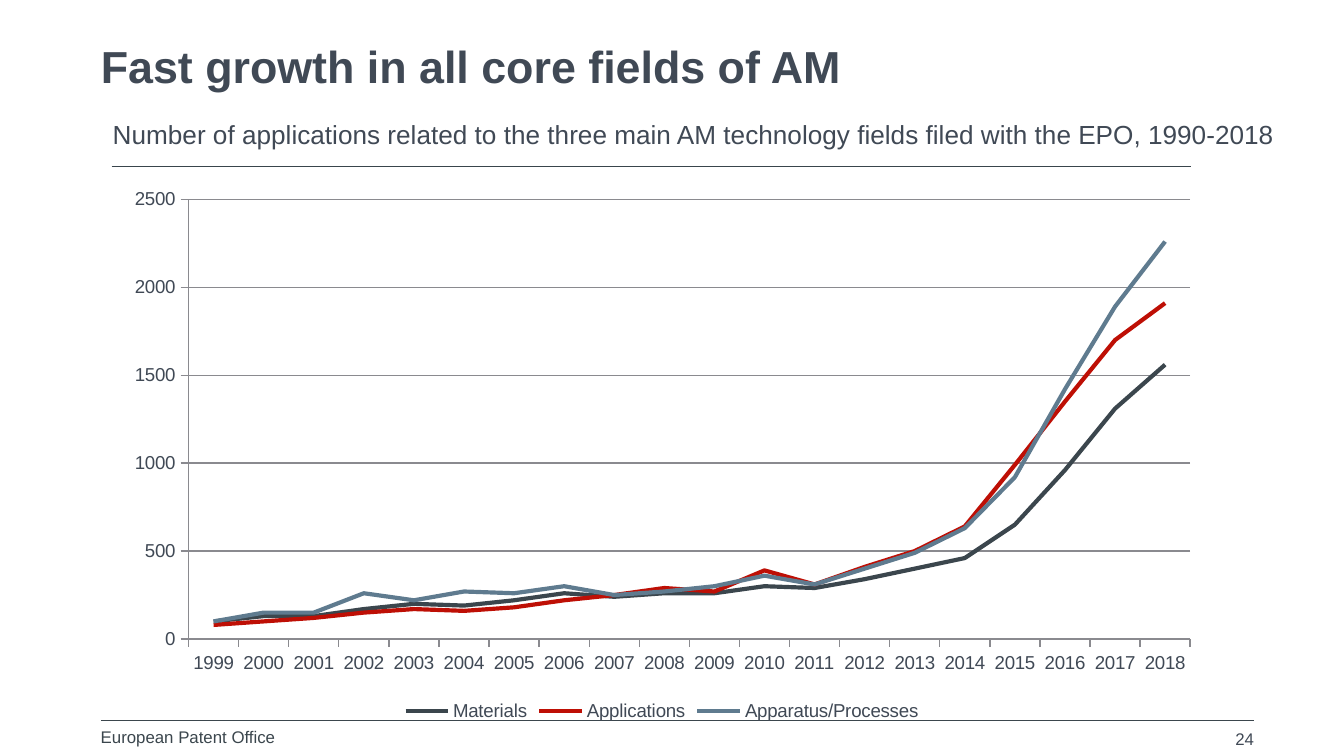
import pptx
import pptx.chart.data
import pptx.dml.color
import pptx.enum.chart
import pptx.enum.shapes
import pptx.enum.text
import pptx.oxml
import pptx.oxml.ns
import pptx.util
from pptx.util import Inches

FONT = "Arial"
COLORS = {
    "text": "404955",
    "slate": "3B464D",
    "rule": "39454C",
    "grid": "8A8A8F",
    "red": "BE0F05",
    "steel": "5F7B8F",
}
YEARS = [str(year) for year in range(1999, 2019)]
SERIES = [
    ("Materials", "slate", [100, 130, 130, 170, 200, 190, 220, 260, 240, 260,
                            260, 300, 290, 340, 400, 460, 650, 960, 1310, 1560]),
    ("Applications", "red", [80, 100, 120, 150, 170, 160, 180, 220, 250, 290,
                             270, 390, 310, 410, 500, 640, 990, 1350, 1700, 1910]),
    ("Apparatus/Processes", "steel", [100, 150, 150, 260, 220, 270, 260, 300, 250, 270,
                                      300, 360, 310, 400, 490, 630, 920, 1420, 1890, 2260]),
]


def rgb(name):
    return pptx.dml.color.RGBColor.from_string(COLORS[name])


def style_line(line, color, width):
    line.color.rgb = rgb(color)
    line.width = pptx.util.Pt(width)


def style_font(font, size, color="text", bold=False):
    font.name = FONT
    font.size = pptx.util.Pt(size)
    font.bold = bold
    font.color.rgb = rgb(color)


def place(shape, box):
    shape.left, shape.top, shape.width, shape.height = map(Inches, box)


def write_text(shape, text, size, color="text", bold=False, insets=(0, 0)):
    frame = shape.text_frame
    frame.word_wrap = True
    frame.vertical_anchor = pptx.enum.text.MSO_ANCHOR.TOP
    frame.margin_left = frame.margin_right = Inches(insets[0])
    frame.margin_top = frame.margin_bottom = Inches(insets[1])
    frame.text = text
    paragraph = frame.paragraphs[0]
    paragraph.alignment = pptx.enum.text.PP_ALIGN.LEFT
    style_font(paragraph.font, size, color, bold)
    return paragraph


def add_text(slide, box, text, size, color="text", insets=(0, 0)):
    shape = slide.shapes.add_textbox(*map(Inches, box))
    return write_text(shape, text, size, color, insets=insets)


def add_rule(slide, left, top, width, color):
    connector = slide.shapes.add_connector(
        pptx.enum.shapes.MSO_CONNECTOR.STRAIGHT,
        Inches(left), Inches(top), Inches(left + width), Inches(top))
    style_line(connector.line, color, 0.75)
    properties = connector._element.spPr
    properties.append(pptx.oxml.parse_xml(
        f"<a:effectLst {pptx.oxml.ns.nsdecls('a')}/>"))


def add_heading(slide, left, top, width):
    title = slide.shapes.title
    place(title, (left, top, width, 0.44))
    paragraph = write_text(title, "Fast growth in all core fields of AM", 24, bold=True)
    paragraph.line_spacing = pptx.util.Pt(28)
    add_text(slide, (left - 0.01, top + 0.53, 9.26, 0.34),
             "Number of applications related to the three main AM technology "
             "fields filed with the EPO, 1990-2018", 14, insets=(0.1, 0.05))
    add_rule(slide, left + 0.08, top + 0.94, 8.03, "rule")


def set_plot_area(chart, x, y, width, height):
    values = "".join(f'<c:{tag} val="{value}"/>' for tag, value in [
        ("layoutTarget", "inner"), ("xMode", "edge"), ("yMode", "edge"),
        ("x", x), ("y", y), ("w", width), ("h", height)])
    layout = pptx.oxml.parse_xml(
        f"<c:layout {pptx.oxml.ns.nsdecls('c')}>"
        f"<c:manualLayout>{values}</c:manualLayout></c:layout>")
    plot_area = chart._chartSpace.chart.plotArea
    for previous in plot_area.findall(pptx.oxml.ns.qn("c:layout")):
        plot_area.remove(previous)
    plot_area.insert(0, layout)


def add_growth_chart(slide, box):
    data = pptx.chart.data.CategoryChartData()
    data.categories = YEARS
    for name, _, values in SERIES:
        data.add_series(name, values)
    chart = slide.shapes.add_chart(
        pptx.enum.chart.XL_CHART_TYPE.LINE, *map(Inches, box), data).chart
    style_font(chart.font, 10)
    chart.has_title = False
    chart.has_legend = True
    chart.legend.position = pptx.enum.chart.XL_LEGEND_POSITION.BOTTOM
    chart.legend.include_in_layout = False
    plot = chart.plots[0]
    plot.vary_by_categories = False
    for series, (_, color, _) in zip(plot.series, SERIES):
        series.smooth = False
        series.marker.style = pptx.enum.chart.XL_MARKER_STYLE.NONE
        style_line(series.format.line, color, 2.25)
    for axis in (chart.category_axis, chart.value_axis):
        axis.major_tick_mark = pptx.enum.chart.XL_TICK_MARK.OUTSIDE
        axis.minor_tick_mark = pptx.enum.chart.XL_TICK_MARK.NONE
        style_line(axis.format.line, "grid", 0.75)
    value_axis = chart.value_axis
    value_axis.minimum_scale = 0
    value_axis.maximum_scale = 2500
    value_axis.major_unit = 500
    value_axis.has_major_gridlines = True
    style_line(value_axis.major_gridlines.format.line, "grid", 0.75)
    set_plot_area(chart, 0.07, 0.04, 0.91, 0.8)


def add_footer(slide, left, top, width):
    add_rule(slide, left, top, width, "slate")
    add_text(slide, (left, top + 0.05, 1.7, 0.19), "European Patent Office", 9, "slate")
    number = add_text(slide, (left + width - 2.33, top + 0.06, 2.33, 0.18), "24", 9)
    number.alignment = pptx.enum.text.PP_ALIGN.RIGHT


def main():
    presentation = pptx.Presentation()
    presentation.slide_width = Inches(10)
    presentation.slide_height = presentation.slide_width * 9 // 16
    slide = presentation.slides.add_slide(presentation.slide_layouts[5])
    add_footer(slide, 0.75, 5.36, 8.58)
    add_heading(slide, 0.75, 0.3, 8.58)
    add_growth_chart(slide, (0.83, 1.32, 8.19, 4.09))
    presentation.save("out.pptx")


if __name__ == "__main__":
    main()
